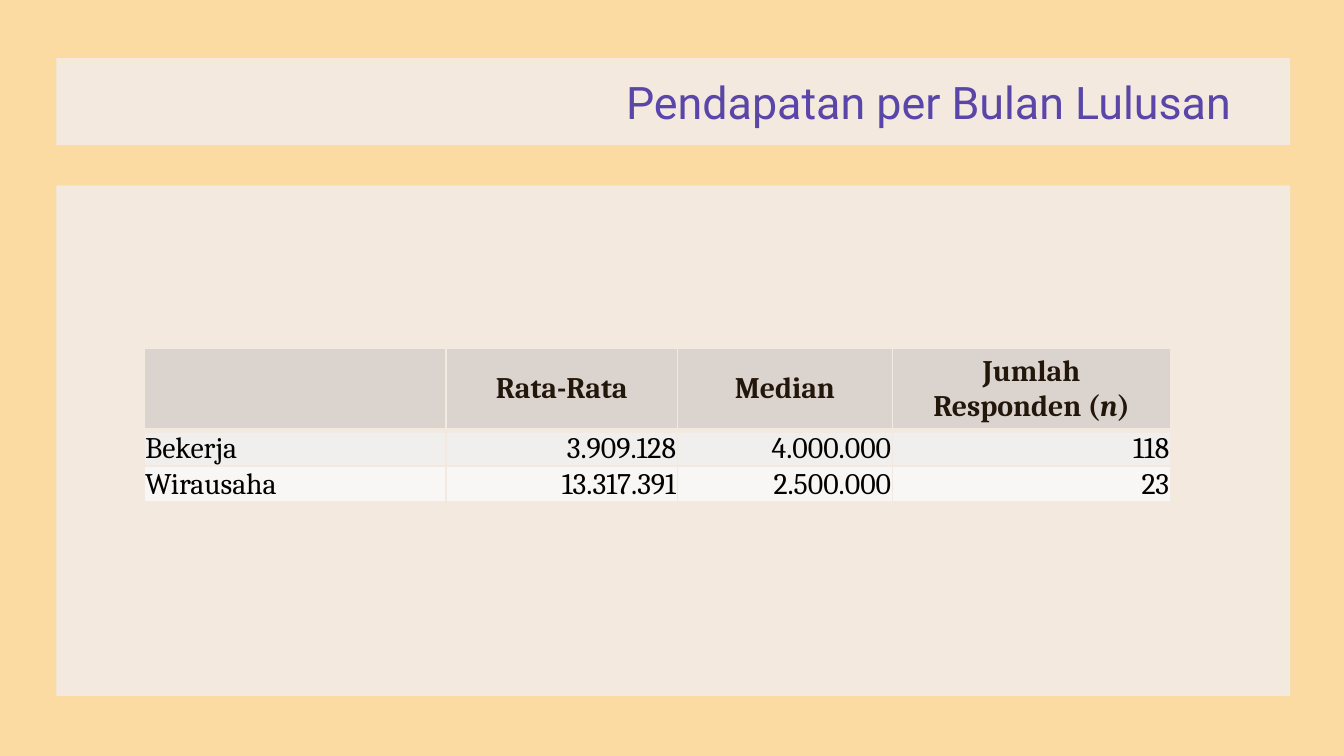
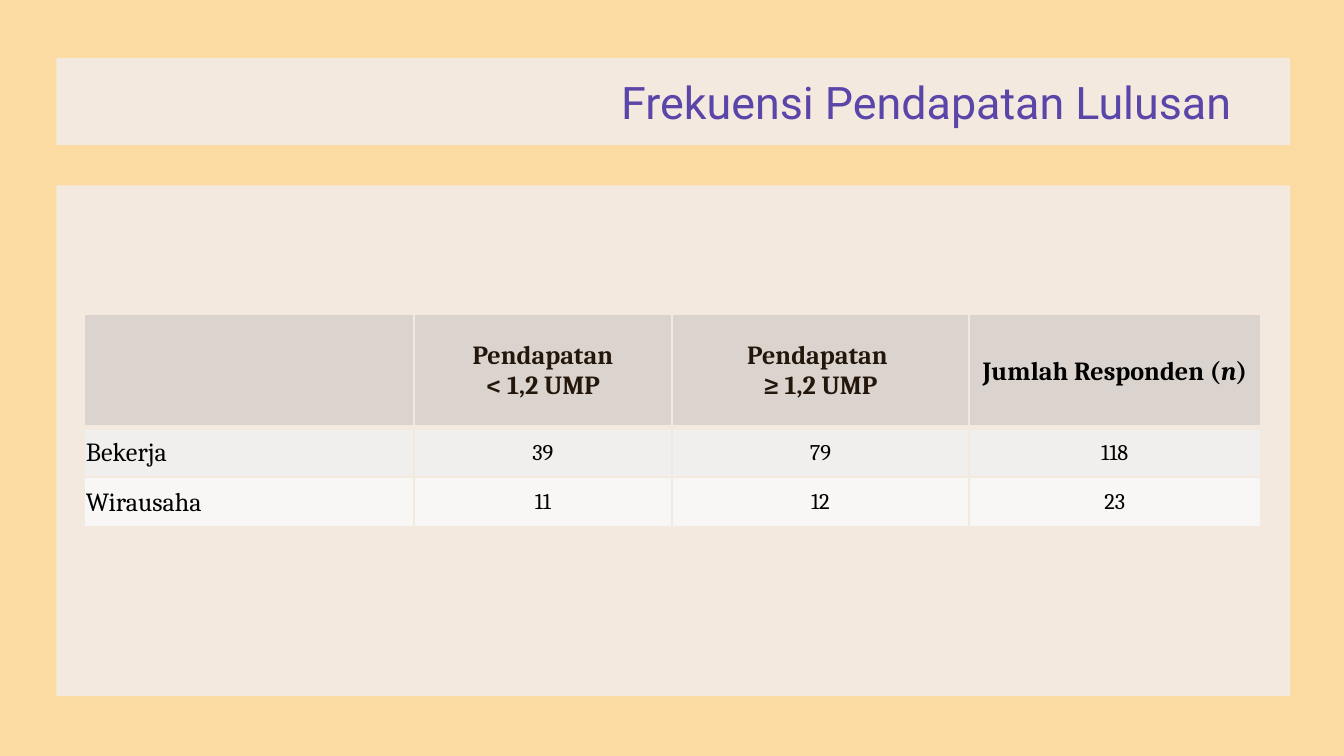
from lxml import etree
from pptx import Presentation
from pptx.dml.color import RGBColor
from pptx.enum.shapes import MSO_SHAPE
from pptx.enum.text import MSO_ANCHOR, PP_ALIGN
from pptx.oxml.ns import qn
from pptx.util import Inches, Pt

RECTANGLE = MSO_SHAPE.RECTANGLE
MIDDLE = MSO_ANCHOR.MIDDLE
LEFT, CENTER, RIGHT = PP_ALIGN.LEFT, PP_ALIGN.CENTER, PP_ALIGN.RIGHT

COLORS = {
    "background": "FCDBA2",
    "panel": "F4E9DF",
    "title": "5A45A8",
    "header_fill": "DBD4CE",
    "header_text": "23170C",
    "odd_row": "F1EFED",
    "even_row": "F8F7F6",
    "text": "000000",
}
ROW_FILLS = ["header_fill", "odd_row", "even_row"]
PANELS = [(0.42, 0.43, 9.18, 0.65), (0.42, 1.38, 9.18, 3.8)]
TITLE_BOX = (0.52, 0.43, 8.74, 0.65)
WIDE_MARGINS = (0.1, 0.05, 0.1, 0.05)
TIGHT_MARGINS = (0.01, 0.01, 0.01, 0)

SLIDES = [
    {
        "title": "Pendapatan per Bulan Lulusan",
        "at": (1.07, 2.59, 7.64, 1.18),
        "columns": [2.25, 1.72, 1.6, 2.07],
        "rows": [0.39, 0.18, 0.18],
        "label_size": 16,
        "number_size": 16,
        "number_align": RIGHT,
        "plain_last_header": False,
        "cells": [
            ["", "Rata-Rata", "Median", "Jumlah Responden (*n*)"],
            ["Bekerja", "3.909.128", "4.000.000", "118"],
            ["Wirausaha", "13.317.391", "2.500.000", "23"],
        ],
    },
    {
        "title": "Frekuensi Pendapatan Lulusan",
        "at": (0.63, 2.34, 8.74, 1.57),
        "columns": [2.45, 1.92, 2.21, 2.17],
        "rows": [0.84, 0.37, 0.37],
        "label_size": 14,
        "number_size": 12,
        "number_align": CENTER,
        "plain_last_header": True,
        "cells": [
            ["", "Pendapatan\n< 1,2 UMP", "Pendapatan \n≥ 1,2 UMP", "Jumlah Responden (*n*)"],
            ["Bekerja", "39", "79", "118"],
            ["Wirausaha", "11", "12", "23"],
        ],
    },
]


def style_span(span, font, size, color):
    span.font.name = font
    span.font.size = Pt(size)
    span.font.color.rgb = RGBColor.from_string(COLORS[color])


def add_borders(cell, bottom_width):
    properties = cell._tc.get_or_add_tcPr()
    for side, width in (("L", 1), ("R", 1), ("T", 1), ("B", bottom_width)):
        line = etree.SubElement(properties, qn(f"a:ln{side}"), w=str(Pt(width)))
        fill = etree.SubElement(line, qn("a:solidFill"))
        etree.SubElement(fill, qn("a:srgbClr"), val=COLORS["panel"])


deck = Presentation()
deck.slide_width = Inches(10)
deck.slide_height = deck.slide_width * 9 // 16
background = deck.slide_master.background.fill
background.solid()
background.fore_color.rgb = RGBColor.from_string(COLORS["background"])

for content in SLIDES:
    page = deck.slides.add_slide(deck.slide_layouts[5])
    title = page.shapes.title

    for place in PANELS:
        panel = page.shapes.add_shape(RECTANGLE, *map(Inches, place))
        panel.shadow.inherit = False
        panel.fill.solid()
        panel.fill.fore_color.rgb = RGBColor.from_string(COLORS["panel"])
        panel.line.fill.background()
        title.element.addprevious(panel.element)

    title.left, title.top, title.width, title.height = map(Inches, TITLE_BOX)
    frame = title.text_frame
    frame.text = content["title"]
    frame.word_wrap = True
    frame.vertical_anchor = MIDDLE
    frame.margin_left = frame.margin_right = Inches(0.1)
    frame.margin_top = frame.margin_bottom = Inches(0.1)
    frame.paragraphs[0].alignment = RIGHT
    style_span(frame.paragraphs[0].runs[0], "Roboto", 24, "title")

    cells = content["cells"]
    table_frame = page.shapes.add_table(len(cells), len(cells[0]), *map(Inches, content["at"]))
    table = table_frame.table
    for column, width in zip(table.columns, content["columns"]):
        column.width = Inches(width)
    for row, height in zip(table.rows, content["rows"]):
        row.height = Inches(height)
    table_frame.height = Inches(content["at"][3])

    for row_index, texts in enumerate(cells):
        is_header = row_index == 0
        for column_index, text in enumerate(texts):
            cell = table.cell(row_index, column_index)
            is_plain = content["plain_last_header"] and column_index == len(texts) - 1
            margins = WIDE_MARGINS if is_header and not is_plain else TIGHT_MARGINS
            cell.margin_left, cell.margin_top, cell.margin_right, cell.margin_bottom = map(Inches, margins)
            cell.vertical_anchor = MIDDLE
            add_borders(cell, 3 if is_header else 1)
            cell.fill.solid()
            cell.fill.fore_color.rgb = RGBColor.from_string(COLORS[ROW_FILLS[row_index]])
            if not text:
                continue

            if is_header:
                align, size = CENTER, content["label_size"]
            elif column_index == 0:
                align, size = LEFT, content["label_size"]
            else:
                align, size = content["number_align"], content["number_size"]
            color = "header_text" if is_header and not is_plain else "text"

            cell.text_frame.text = text.replace("*", "")
            for para, line in zip(cell.text_frame.paragraphs, text.split("\n")):
                para.alignment = align
                para.clear()
                for part_index, part in enumerate(line.split("*")):
                    span = para.add_run()
                    span.text = part
                    style_span(span, "Cambria", size, color)
                    span.font.bold = is_header
                    span.font.italic = part_index % 2 == 1

deck.save("out.pptx")
